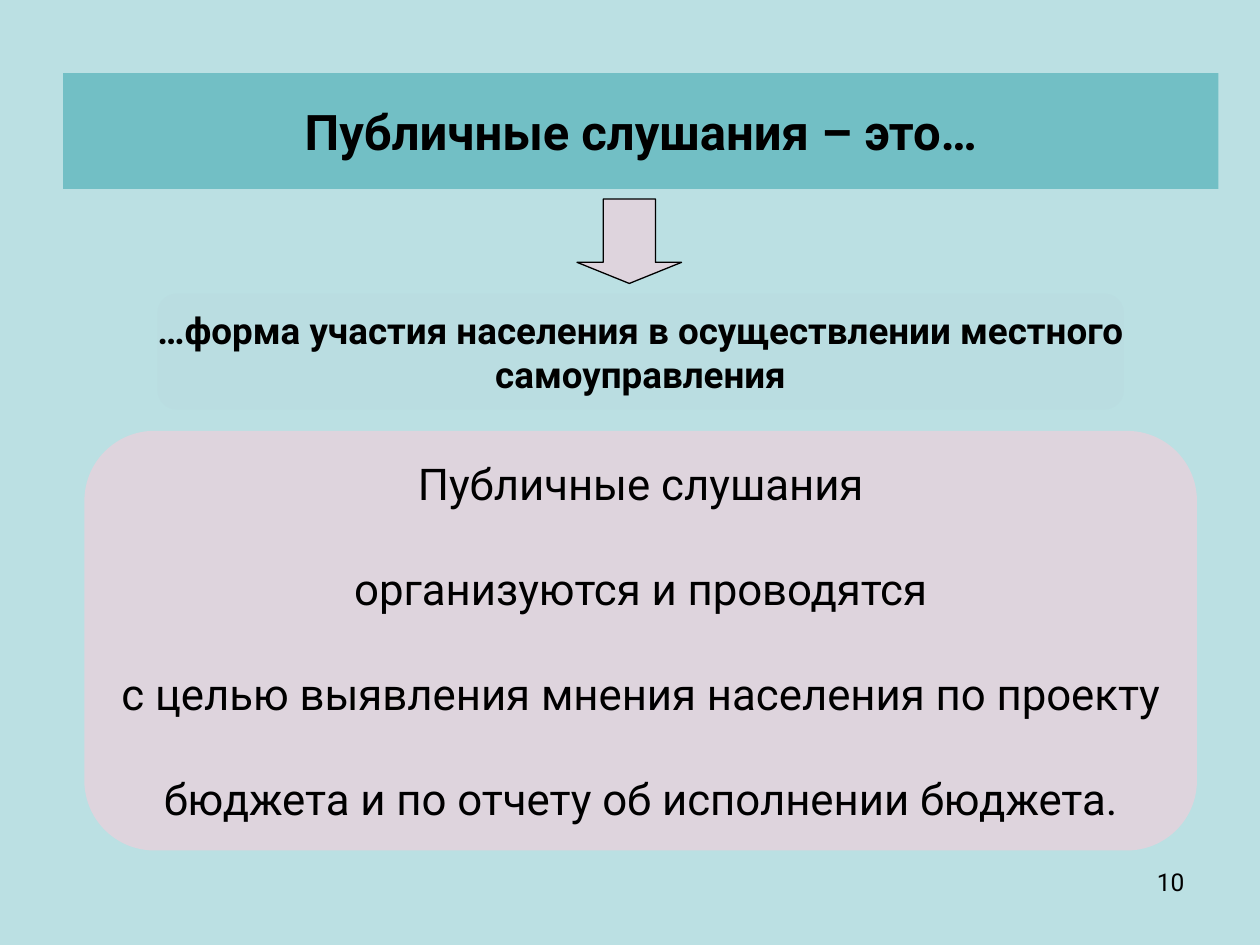
from lxml import etree
from pptx import Presentation
from pptx.dml.color import RGBColor
from pptx.enum.shapes import MSO_SHAPE
from pptx.enum.text import MSO_ANCHOR, PP_ALIGN
from pptx.oxml.ns import qn
from pptx.util import Inches, Pt

FONT = "Roboto"
BLACK, PINK = "000000", "DED4DD"


def paint(fill, color):
    fill.solid()
    fill.fore_color.rgb = RGBColor.from_string(color)


def write(shape, lines, size, bold=False, align=PP_ALIGN.CENTER,
          anchor=MSO_ANCHOR.MIDDLE, wrap=True, gap=0):
    """Fill the shape with one paragraph per line, gap points apart."""
    frame = shape.text_frame
    frame.word_wrap = wrap
    frame.vertical_anchor = anchor
    for index, line in enumerate(lines):
        paragraph = frame.add_paragraph() if index else frame.paragraphs[0]
        paragraph.text = line
        paragraph.alignment = align
        paragraph.space_before = Pt(gap if index else 0)
        for name, value in {"name": FONT, "size": Pt(size), "bold": bold}.items():
            setattr(paragraph.font, name, value)
        paragraph.font.color.rgb = RGBColor.from_string(BLACK)


presentation = Presentation()
presentation.slide_width, presentation.slide_height = Inches(10), Inches(7.5)
slide = presentation.slides.add_slide(presentation.slide_layouts[5])
paint(slide.background.fill, "BBE0E3")

# Title banner: the title placeholder with rounded corners
title = slide.shapes.title
title.left, title.top = Inches(0.5), Inches(0.58)
title.width, title.height = Inches(9.17), Inches(0.92)
geometry = etree.SubElement(title.element.spPr, qn("a:prstGeom"), prst="roundRect")
etree.SubElement(geometry, qn("a:avLst"))
paint(title.fill, "72BFC5")
write(title, ["Публичные слушания – это…"], 28, bold=True)

# Definition, arrow and purpose
blocks = [
    (MSO_SHAPE.ROUNDED_RECTANGLE, (1.25, 2.33, 7.67, 0.92), "BADDE1",
     ["…форма участия населения в осуществлении местного", "самоуправления"],
     {"size": 21, "bold": True, "wrap": False}),
    (MSO_SHAPE.DOWN_ARROW, (4.58, 1.58, 0.83, 0.67), PINK, [], {}),
    (MSO_SHAPE.ROUNDED_RECTANGLE, (0.67, 3.42, 8.83, 3.33), PINK,
     ["Публичные слушания", "организуются и проводятся",
      "с целью выявления мнения населения по проекту",
      "бюджета и по отчету об исполнении бюджета."],
     {"size": 25, "gap": 30}),
]
for kind, box, color, lines, text_format in blocks:
    shape = slide.shapes.add_shape(kind, *map(Inches, box))
    shape.shadow.inherit = False
    paint(shape.fill, color)
    if lines:
        shape.line.fill.background()
        write(shape, lines, **text_format)
    else:
        shape.adjustments[1] = 0.25
        paint(shape.line.fill, BLACK)
        shape.line.width = Pt(0.75)

page_number = slide.shapes.add_textbox(*map(Inches, (7.17, 6.83, 2.33, 0.52)))
write(page_number, ["10"], 14, align=PP_ALIGN.RIGHT, anchor=MSO_ANCHOR.TOP)

presentation.save("out.pptx")
